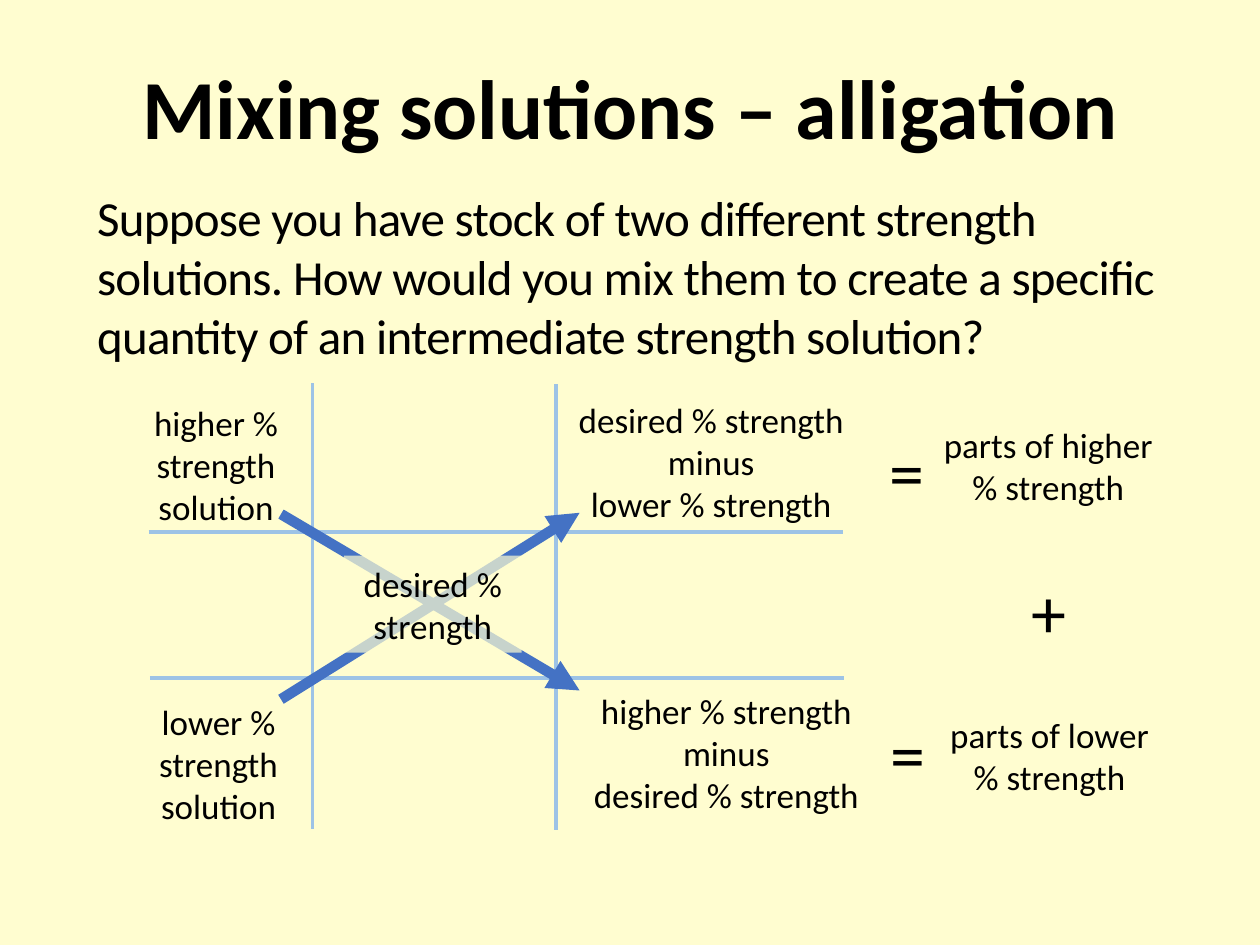
from lxml import etree
from pptx import Presentation
from pptx.dml.color import RGBColor
from pptx.enum import shapes, text
from pptx.oxml.ns import qn
from pptx.util import Inches, Pt

CREAM, BLACK, PALE_BLUE, BLUE = "FFFDD0", "000000", "9DC3E6", "4472C4"
CENTER = text.PP_ALIGN.CENTER

GRID = [
    (1.19, 5.38, 6.7, 5.38),
    (4.41, 3.05, 4.41, 6.59),
    (2.48, 3.04, 2.48, 6.58),
    (1.18, 4.22, 6.69, 4.22),
]
ARROWS = [(2.23, 4.08, 4.6, 5.48), (2.23, 5.55, 4.6, 4.07)]
LABELS = [
    ((0.78, 3.14, 1.87, 1.11), ["higher % strength", "solution"]),
    ((4.48, 5.42, 2.57, 1.11), ["higher % strength", "minus", "desired % strength"]),
    ((0.77, 5.51, 1.93, 1.11), ["lower % strength", "solution"]),
    ((4.48, 3.11, 2.33, 1.11), ["desired % strength minus", "lower % strength"]),
    ((7.31, 3.31, 2.02, 0.77), ["parts of higher % strength"]),
    ((7.32, 5.61, 2.02, 0.77), ["parts of lower % strength"]),
]
SIGNS = [(6.96, 3.35, "="), (6.97, 5.59, "="), (8.09, 4.46, "+")]


def color(value):
    """Turn a hex string into a colour."""
    return RGBColor.from_string(value)


def apply(target, values):
    """Set each named value on the target."""
    for name, value in values.items():
        setattr(target, name, value)


def place(shape, bounds):
    """Move and size a shape, in inches."""
    names = ("left", "top", "width", "height")
    apply(shape, dict(zip(names, map(Inches, bounds))))


def write(shape, lines, size, frame_format=None, para_format=None, bold=False):
    """Fill a shape with one paragraph per line and return the paragraphs."""
    frame = shape.text_frame
    frame.text = "\n".join(lines)
    apply(frame, {"word_wrap": True, **(frame_format or {})})
    for para in frame.paragraphs:
        apply(para, para_format or {})
        span = para.runs[0]
        apply(span.font, {"name": "Calibri", "size": Pt(size), "bold": bold})
        span.font.color.rgb = color(BLACK)
    return frame.paragraphs


def add_title(page, title):
    """Format the title placeholder."""
    box = page.shapes.title
    place(box, (0.28, 0.4, 9.45, 0.98))
    frame_format = {
        "vertical_anchor": text.MSO_ANCHOR.MIDDLE,
        "auto_size": text.MSO_AUTO_SIZE.NONE,
    }
    para_format = {"alignment": CENTER, "line_spacing": 0.9}
    write(box, [title], 48, frame_format, para_format, bold=True)


def add_question(page, question):
    """Format the body placeholder as plain text without a bullet."""
    box = page.placeholders[1]
    place(box, (0.67, 1.44, 8.82, 5.03))
    frame_format = {"auto_size": text.MSO_AUTO_SIZE.NONE}
    para = write(box, [question], 28, frame_format, {"space_before": Pt(15)})[0]
    properties = para._p.get_or_add_pPr()
    properties.set("marL", "0")
    properties.set("indent", "0")
    etree.SubElement(properties, qn("a:buNone"))
    para.runs[0]._r.get_or_add_rPr().set("spc", "-40")


def add_line(page, ends, line_color, width, arrow=False):
    """Draw a straight line, with an arrowhead at its end if asked."""
    line = page.shapes.add_connector(
        shapes.MSO_CONNECTOR.STRAIGHT, *map(Inches, ends)
    )
    line.line.color.rgb = color(line_color)
    line.line.width = Pt(width)
    if arrow:
        etree.SubElement(line.line._get_or_add_ln(), qn("a:tailEnd"), type="triangle")
    etree.SubElement(line._element.spPr, qn("a:effectLst"))


def add_label(page, bounds, lines):
    """Add a centred text label."""
    box = page.shapes.add_textbox(*map(Inches, bounds))
    write(box, lines, 20, para_format={"alignment": CENTER})


def add_sign(page, left, top, sign):
    """Add a large arithmetic sign."""
    box = page.shapes.add_textbox(*map(Inches, (left, top, 0.48, 0.77)))
    write(box, [sign], 40, {"word_wrap": False})


def add_center(page, bounds, label):
    """Add the translucent label over the crossing arrows."""
    box = page.shapes.add_shape(shapes.MSO_SHAPE.RECTANGLE, *map(Inches, bounds))
    box.shadow.inherit = False
    box.fill.solid()
    box.fill.fore_color.rgb = color(CREAM)
    tint = box._element.spPr.find(f"{qn('a:solidFill')}/{qn('a:srgbClr')}")
    etree.SubElement(tint, qn("a:alpha"), val="70000")
    box.line.fill.background()
    write(box, [label], 20, para_format={"alignment": CENTER})


def main():
    """Build and save the slide."""
    deck = Presentation()
    apply(deck, {"slide_width": Inches(10), "slide_height": Inches(7.5)})
    page = deck.slides.add_slide(deck.slide_layouts[1])
    page.background.fill.solid()
    page.background.fill.fore_color.rgb = color(CREAM)
    add_title(page, "Mixing solutions – alligation")
    add_question(
        page,
        "Suppose you have stock of two different strength solutions. "
        "How would you mix them to create a specific quantity of an "
        "intermediate strength solution?",
    )
    for ends in GRID:
        add_line(page, ends, PALE_BLUE, 2.25)
    for ends in ARROWS:
        add_line(page, ends, BLUE, 6, arrow=True)
    add_center(page, (2.73, 4.41, 1.41, 0.77), "desired % strength")
    for bounds, lines in LABELS:
        add_label(page, bounds, lines)
    for left, top, sign in SIGNS:
        add_sign(page, left, top, sign)
    deck.save("out.pptx")


if __name__ == "__main__":
    main()
